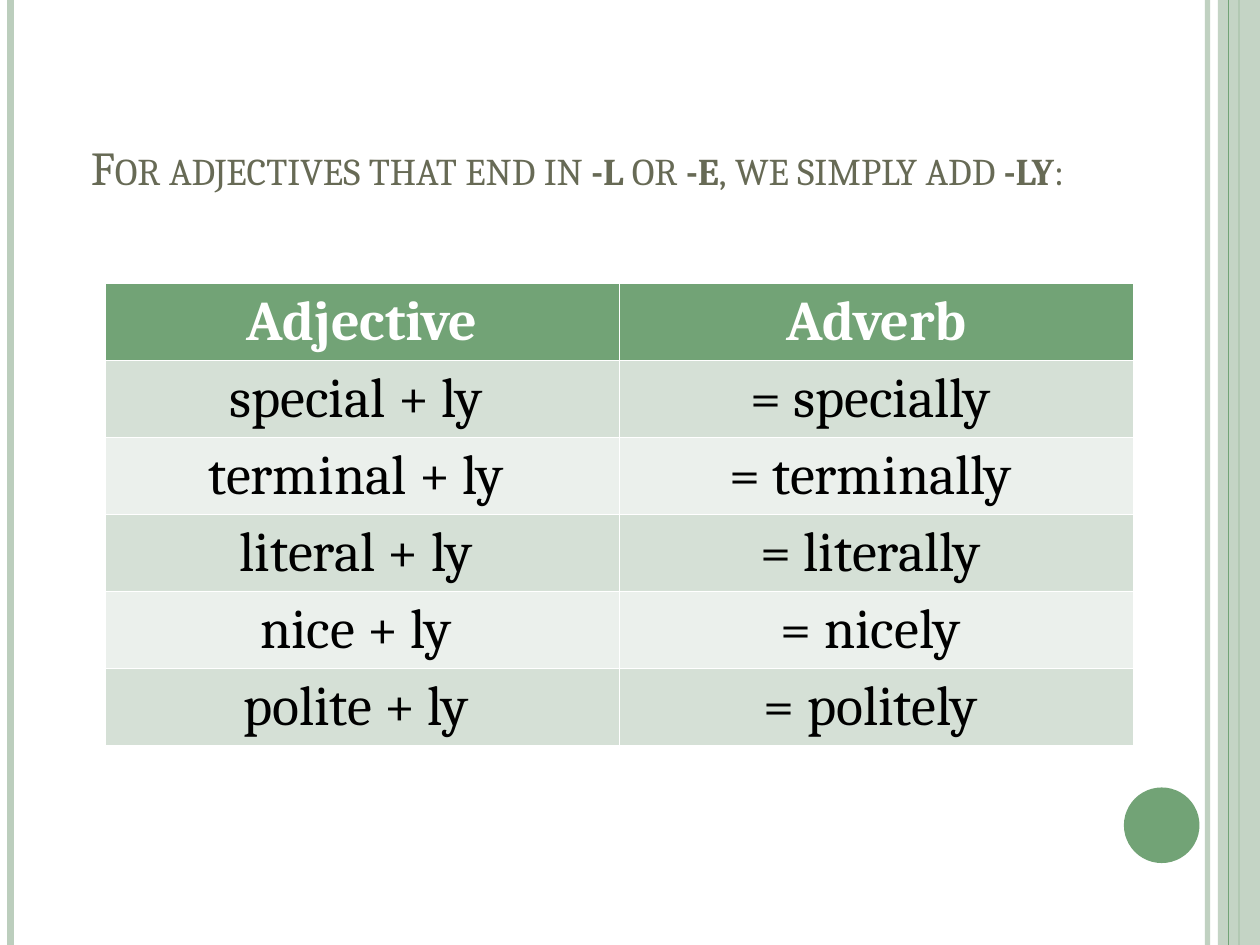
import pptx
import pptx.util
import pptx.dml.color
import pptx.enum.shapes
import pptx.enum.text
import pptx.oxml.ns
import lxml.etree

Pt = pptx.util.Pt
qn = pptx.oxml.ns.qn
CENTER = pptx.enum.text.PP_ALIGN.CENTER
SHAPE = pptx.enum.shapes.MSO_SHAPE
FONT = "Cambria"
WIDTH, HEIGHT = 720, 540
COLORS = {
    "accent": "72A376",
    "pale": "BCCEBD",
    "title": "676A55",
    "band_dark": "D5E0D6",
    "band_light": "EBF0EC",
    "white": "FFFFFF",
    "black": "000000",
}
TITLE_RUNS = [
    ("For adjectives that end in ", False),
    ("-l", True),
    (" or ", False),
    ("-e", True),
    (", we simply add ", False),
    ("-ly", True),
    (":", False),
]
ROWS = [("Adjective", "Adverb")] + [
    (f"{word} + ly ", f"= {word}ly ")
    for word in ("special", "terminal", "literal", "nice", "polite")
]


def rgb(name):
    return pptx.dml.color.RGBColor.from_string(COLORS[name])


def set_alpha(spPr, percent):
    color = next(spPr.iter(qn("a:srgbClr")))
    lxml.etree.SubElement(color, qn("a:alpha"), val=str(percent * 1000))


def add_rule(slide, x, top, height, color, weight, alpha=100):
    line = slide.shapes.add_connector(
        pptx.enum.shapes.MSO_CONNECTOR.STRAIGHT, Pt(x), Pt(top), Pt(x), Pt(top + height))
    line.line.color.rgb = rgb(color)
    line.line.width = Pt(weight)
    spPr = line._element.spPr
    if alpha < 100:
        set_alpha(spPr, alpha)
    lxml.etree.SubElement(spPr, qn("a:effectLst"))


def add_filled(slide, kind, box, color, alpha=100):
    sp = slide.shapes.add_shape(kind, *map(Pt, box))
    sp.shadow.inherit = False
    sp.fill.solid()
    sp.fill.fore_color.rgb = rgb(color)
    sp.line.fill.background()
    if alpha < 100:
        set_alpha(sp._element.spPr, alpha)


def add_frame(slide, box):
    left, top, width, height = box
    right = left + width
    add_rule(slide, right - 30, top, height, "pale", 3, 93)
    add_rule(slide, left + 6, top, height, "pale", 4.5)
    add_rule(slide, right - 12, top, height, "accent", 1.5)
    add_filled(slide, SHAPE.RECTANGLE, (right - 24, top, 24, height), "pale", 87)
    add_rule(slide, right - 18, top, height, "accent", 0.75)
    add_filled(slide, SHAPE.OVAL, (right - 77.76, top + 450, 43.2, 43.2), "accent")


def format_run(r, size, color, bold):
    r.font.name = FONT
    r.font.size = Pt(size)
    r.font.bold = bold
    r.font.color.rgb = rgb(color)


def fill_title(slide, box):
    title = slide.shapes.title
    title.left, title.top, title.width, title.height = map(Pt, box)
    tf = title.text_frame
    tf.word_wrap = True
    tf.auto_size = pptx.enum.text.MSO_AUTO_SIZE.NONE
    tf.vertical_anchor = pptx.enum.text.MSO_ANCHOR.BOTTOM
    tf.margin_bottom = 0
    p = tf.paragraphs[0]
    p.alignment = CENTER
    for text, bold in TITLE_RUNS:
        r = p.add_run()
        r.text = text
        format_run(r, 27, "title", bold)
        r.font._element.set("cap", "small")


def add_word_table(slide, box):
    table = slide.shapes.add_table(len(ROWS), len(ROWS[0]), *map(Pt, box)).table
    for i, row in enumerate(ROWS):
        header = i == 0
        band = "accent" if header else "band_dark" if i % 2 else "band_light"
        for j, text in enumerate(row):
            cell = table.cell(i, j)
            cell.fill.solid()
            cell.fill.fore_color.rgb = rgb(band)
            cell.vertical_anchor = pptx.enum.text.MSO_ANCHOR.MIDDLE
            cell.margin_top = cell.margin_bottom = 0
            cell.text_frame.text = text
            p = cell.text_frame.paragraphs[0]
            p.alignment = CENTER
            format_run(p.runs[0], 32, "white" if header else "black", header)


def main():
    prs = pptx.Presentation()
    prs.slide_width, prs.slide_height = Pt(WIDTH), Pt(HEIGHT)
    slide = prs.slides.add_slide(prs.slide_layouts[5])
    slide.background.fill.solid()
    slide.background.fill.fore_color.rgb = rgb("white")
    add_frame(slide, (0, 0, WIDTH, HEIGHT))
    fill_title(slide, (36, 21.6, 588, 90))
    add_word_table(slide, (60, 162, 588, 264))
    prs.save("out.pptx")


if __name__ == "__main__":
    main()
